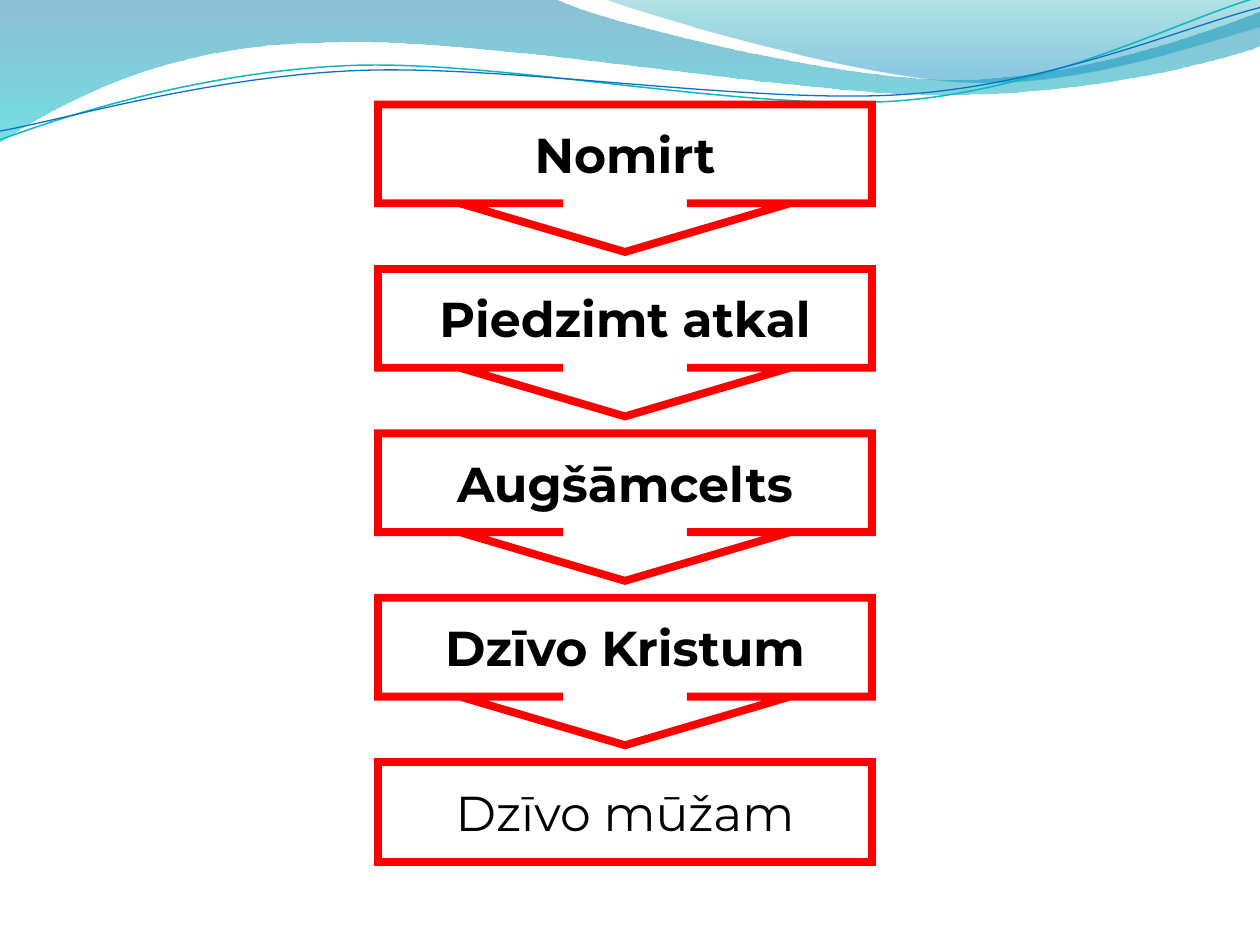
from math import cos, radians, sin

from lxml.etree import SubElement
from pptx import Presentation
from pptx.dml.color import RGBColor
from pptx.enum.shapes import MSO_SHAPE
from pptx.enum.text import MSO_ANCHOR, PP_ALIGN
from pptx.oxml.ns import qn
from pptx.util import Inches, Pt

LINE_TILT = 2.7
LINE_CENTER = (4.99, 0.58)

UPPER_WAVE = [
    (0, -0.01),
    (4.4, -0.01),
    (4.76, 0.17, 6.64, 0.63, 7.58, 0.63),
    (8.53, 0.63, 9.58, 0.26, 10, 0.09),
    (10.01, 0.36),
    (9.83, 0.44, 8.7, 0.76, 7.46, 0.75),
    (6.22, 0.75, 3.82, 0.28, 2.57, 0.34),
    (1.29, 0.35, 0.46, 0.83, -0.01, 1.13),
    (0, -0.01),
]
RIGHT_WAVE = [
    (4.79, -0.01),
    (5.09, 0.11, 6.82, 0.62, 7.69, 0.65),
    (8.56, 0.69, 9.61, 0.32, 10, 0.21),
    (10, 0),
    (4.79, -0.01),
]
TEAL_LINE = [
    (0, 1.11),
    (0.48, 0.93, 1.58, 0.57, 2.77, 0.52),
    (3.95, 0.47, 5.93, 0.89, 7.13, 0.8),
    (8.33, 0.71, 9.38, 0.15, 9.98, -0.02),
]
BLUE_LINE = [
    (0, 1.04),
    (0.47, 0.96, 1.64, 0.61, 2.83, 0.56),
    (4.03, 0.51, 5.97, 0.83, 7.17, 0.75),
    (8.36, 0.67, 9.41, 0.21, 10, 0.06),
]
STEPS = ["Nomirt", "Piedzimt atkal", "Augšāmcelts", "Dzīvo Kristum"]
LAST_STEP = "Dzīvo mūžam"


def color(hex_string):
    return RGBColor.from_string(hex_string)


def turn(point, degrees):
    cx, cy = LINE_CENTER
    dx, dy = point[0] - cx, point[1] - cy
    c, s = cos(radians(degrees)), sin(radians(degrees))
    return cx + dx * c - dy * s, cy + dx * s + dy * c


def add_curve(shapes, outline, close=False, tilt=0):
    points = [
        turn(pair, tilt)
        for segment in outline
        for pair in zip(segment[0::2], segment[1::2])
    ]
    emu = [(Inches(x), Inches(y)) for x, y in points]
    builder = shapes.build_freeform(*emu[0])
    builder.add_line_segments(emu[1:], close=close)
    sp = builder.convert_to_shape()
    sp.shadow.inherit = False
    sp.rotation = -tilt

    lines = iter(sp._element.findall(".//" + qn("a:lnTo")))
    for segment in outline[1:]:
        first = next(lines)
        if len(segment) == 6:
            first.tag = qn("a:cubicBezTo")
            for _ in range(2):
                other = next(lines)
                first.append(other[0])
                other.getparent().remove(other)
    return sp


def add_wave(shapes, outline, stops):
    sp = add_curve(shapes, outline, close=True)
    sp.line.fill.background()
    sp.fill.gradient()
    sp.fill.gradient_angle = 270
    for stop, (position, hex_string, _) in zip(sp.fill.gradient_stops, stops):
        stop.position = position
        stop.color.rgb = color(hex_string)
    fill_colors = sp._element.spPr.findall(".//" + qn("a:gs") + "/" + qn("a:srgbClr"))
    for fill_color, (_, _, opacity) in zip(fill_colors, stops):
        SubElement(fill_color, qn("a:alpha")).set("val", str(opacity * 1000))


def add_wave_line(shapes, outline, hex_string, width):
    sp = add_curve(shapes, outline, tilt=LINE_TILT)
    sp.fill.background()
    sp.line.color.rgb = color(hex_string)
    sp.line.width = Pt(width)


def set_text(sp, text, *, size=28, font="Montserrat", hex_string="000000", bold=False):
    tf = sp.text_frame
    tf.word_wrap = False
    tf.vertical_anchor = MSO_ANCHOR.MIDDLE
    p = tf.paragraphs[0]
    p.alignment = PP_ALIGN.CENTER
    r = p.add_run()
    r.text = text
    r.font.size = Pt(size)
    r.font.name = font
    r.font.bold = bold
    r.font.color.rgb = color(hex_string)


def add_step(shapes, kind, top, height, text, adjustments=(), bold=False):
    sp = shapes.add_shape(kind, Inches(3), Inches(top), Inches(3.92), Inches(height))
    for i, value in enumerate(adjustments):
        sp.adjustments[i] = value
    sp.shadow.inherit = False
    sp.fill.solid()
    sp.fill.fore_color.rgb = color("FFFFFF")
    sp.line.color.rgb = color("FF0000")
    sp.line.width = Pt(4.5)
    SubElement(sp.line._get_or_add_ln(), qn("a:miter")).set("lim", "800000")
    set_text(sp, text, bold=bold)


def main():
    prs = Presentation()
    prs.slide_width, prs.slide_height = Inches(10), Inches(7.5)
    slide = prs.slides.add_slide(prs.slide_layouts[6])
    shapes = slide.shapes

    add_wave(shapes, UPPER_WAVE, [(0, "0074A1", 45), (1, "00C6CF", 55)])
    add_wave(shapes, RIGHT_WAVE, [(0, "00A1A9", 30), (0.8, "008BBF", 45)])
    wave_lines = shapes.add_group_shape().shapes
    add_wave_line(wave_lines, TEAL_LINE, "0AB8BF", 0.85)
    add_wave_line(wave_lines, BLUE_LINE, "0F6FC6", 0.75)

    first_top, last_top = 0.83, 6.05
    pitch = (last_top - first_top) / len(STEPS)
    for i, text in enumerate(STEPS):
        add_step(
            shapes, MSO_SHAPE.DOWN_ARROW_CALLOUT, first_top + i * pitch, 1.17, text,
            adjustments=(0.84, 1.12, 0.33, 0.67), bold=True,
        )
    add_step(shapes, MSO_SHAPE.RECTANGLE, last_top, 0.79, LAST_STEP)

    prs.save("out.pptx")


if __name__ == "__main__":
    main()
